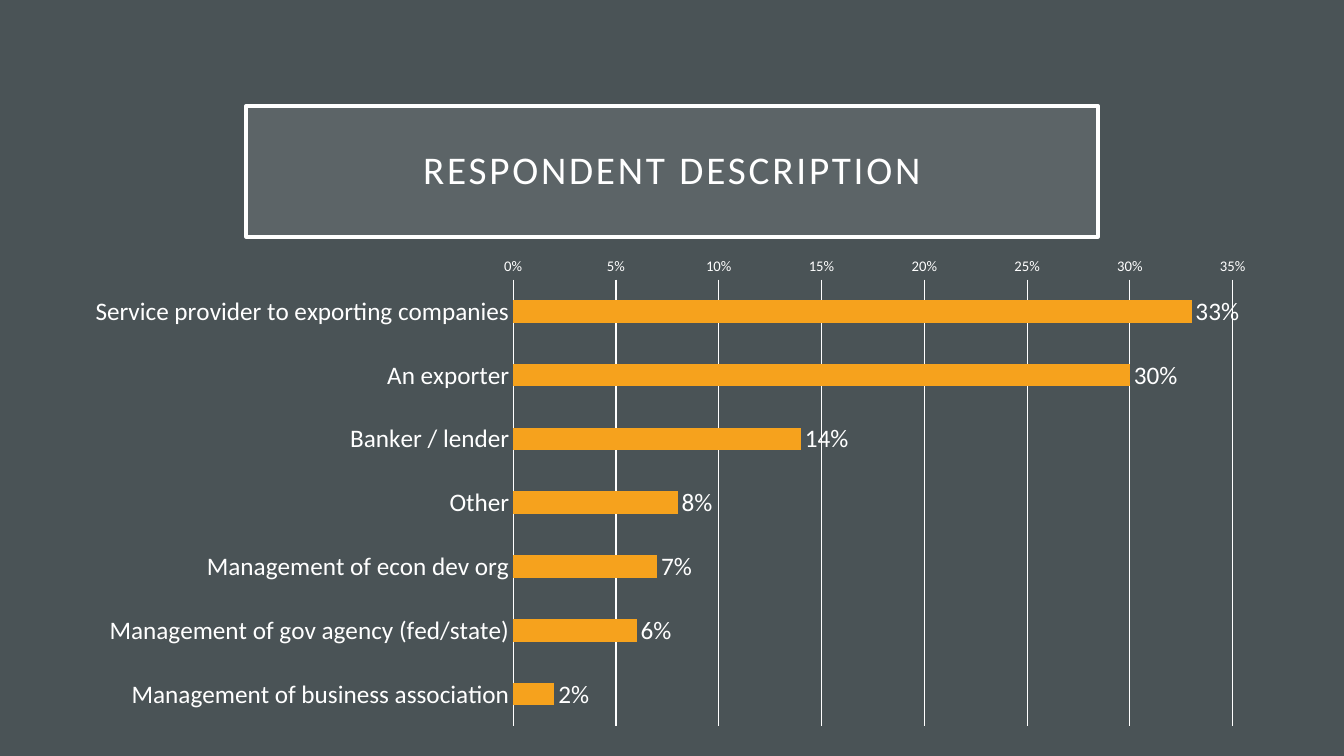
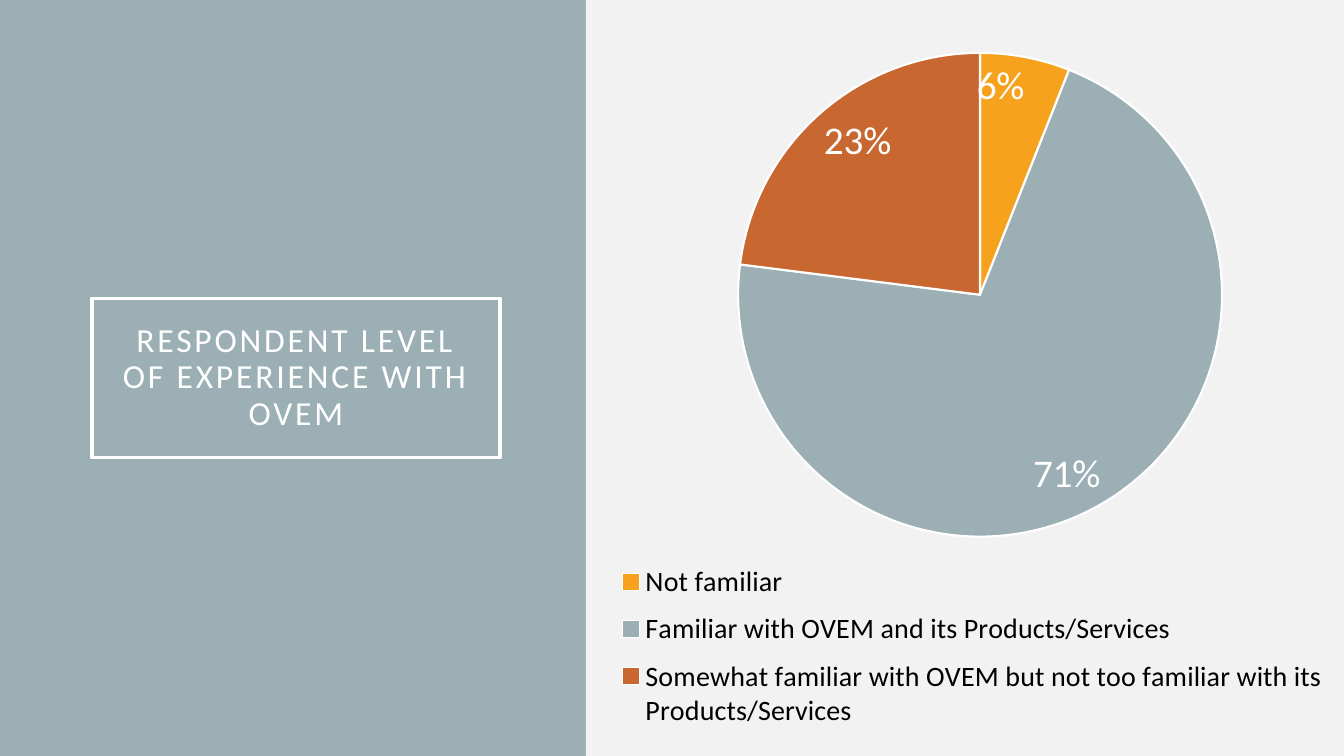
import lxml.etree
import pptx
import pptx.chart.data
import pptx.dml.color
import pptx.enum.chart
import pptx.enum.shapes
import pptx.enum.text
import pptx.oxml.ns
import pptx.util

# Shared look
RGB = pptx.dml.color.RGBColor
WHITE = RGB(0xFF, 0xFF, 0xFF)
BLACK = RGB(0x00, 0x00, 0x00)
SLATE = RGB(0x4A, 0x53, 0x56)
MIST = RGB(0x9B, 0xAF, 0xB5)
PALE = RGB(0xF2, 0xF2, 0xF2)
AMBER = RGB(0xF6, 0xA2, 0x1D)
RUST = RGB(0xC9, 0x67, 0x31)
FONT = "Calibri"
WIDTH = pptx.util.Inches(13.33)
HEIGHT = pptx.util.Inches(7.5)

# Areas: left, top, width, height in percent of the slide
WIDE_TITLE = (18.31, 14, 63.39, 17.33)
BAR_AREA = (5.33, 32.8, 89.12, 64.53)
SIDE_TITLE = (6.83, 39.47, 30.38, 21.07)
PANEL = (43.59, 0, 56.41, 100)

RESPONDENTS = {
    "Service provider to exporting companies": 0.33,
    "An exporter": 0.30,
    "Banker / lender": 0.14,
    "Other": 0.08,
    "Management of econ dev org": 0.07,
    "Management of gov agency (fed/state)": 0.06,
    "Management of business association": 0.02,
}
EXPERIENCE = {
    "Not familiar": 0.06,
    "Familiar with OVEM and its Products/Services": 0.71,
    "Somewhat familiar with OVEM but not too familiar with its Products/Services": 0.23,
}


def place(area):
    left, top, width, height = area
    return [round(share * side / 100) for share, side in
            ((left, WIDTH), (top, HEIGHT), (width, WIDTH), (height, HEIGHT))]


def style_font(font, size, color=WHITE):
    font.name = FONT
    font.size = pptx.util.Pt(size)
    font.color.rgb = color


def style_line(line, points):
    line.color.rgb = WHITE
    line.width = pptx.util.Pt(points)


def chart_tag(name):
    return pptx.oxml.ns.qn("c:" + name)


def add_page(deck, color):
    page = deck.slides.add_slide(deck.slide_layouts[6])
    page.background.fill.solid()
    page.background.fill.fore_color.rgb = color
    return page


def add_rectangle(page, area, color=None):
    box = page.shapes.add_shape(pptx.enum.shapes.MSO_SHAPE.RECTANGLE, *place(area))
    box.shadow.inherit = False
    box.line.fill.background()
    if color is None:
        box.fill.background()
    else:
        box.fill.solid()
        box.fill.fore_color.rgb = color
    return box


def add_title(page, area, text, size, opacity=None):
    box = add_rectangle(page, area, None if opacity is None else WHITE)
    if opacity is not None:
        color = next(box.fill._xPr.iter(pptx.oxml.ns.qn("a:srgbClr")))
        alpha = lxml.etree.SubElement(color, pptx.oxml.ns.qn("a:alpha"))
        alpha.set("val", str(opacity * 1000))
    style_line(box.line, 2.5)
    frame = box.text_frame
    frame.word_wrap = True
    frame.vertical_anchor = pptx.enum.text.MSO_ANCHOR.MIDDLE
    frame.margin_left = frame.margin_right = pptx.util.Inches(0.2)
    frame.margin_top = frame.margin_bottom = pptx.util.Inches(0.2)
    para = frame.paragraphs[0]
    para.alignment = pptx.enum.text.PP_ALIGN.CENTER
    para.line_spacing = 0.9
    span = para.add_run()
    span.text = text
    style_font(span.font, size)
    span.font._element.set("spc", "200")


def add_chart(page, area, kind, values, label_size, label_position):
    data = pptx.chart.data.CategoryChartData(number_format="0%")
    data.categories = list(values)
    data.add_series("Series 1", list(values.values()))
    chart = page.shapes.add_chart(kind, *place(area), data).chart
    chart.has_title = False
    chart.has_legend = False
    style_font(chart.font, 10)
    plot = chart.plots[0]
    plot.has_data_labels = True
    labels = plot.data_labels
    labels.show_value = True
    labels.show_percentage = False
    labels.number_format = "0%"
    labels.number_format_is_linked = False
    labels.position = label_position
    style_font(labels.font, label_size)
    return chart


def make_layout(shares, inner=False):
    layout = lxml.etree.Element(chart_tag("layout"))
    manual = lxml.etree.SubElement(layout, chart_tag("manualLayout"))
    settings = [("layoutTarget", "inner")] if inner else []
    settings += [("xMode", "edge"), ("yMode", "edge")]
    settings += zip("xywh", shares)
    for name, value in settings:
        lxml.etree.SubElement(manual, chart_tag(name)).set("val", str(value))
    return layout


def set_layouts(chart, plot_shares, legend_shares):
    plot_area = next(chart._chartSpace.iter(chart_tag("plotArea")))
    legend = next(chart._chartSpace.iter(chart_tag("legend")))
    for parent in (plot_area, legend):
        for old in parent.findall(chart_tag("layout")):
            parent.remove(old)
    plot_area.insert(0, make_layout(plot_shares, inner=True))
    legend.find(chart_tag("legendPos")).addnext(make_layout(legend_shares))


def add_bar_chart(page, area, values):
    chart = add_chart(page, area, pptx.enum.chart.XL_CHART_TYPE.BAR_CLUSTERED, values,
                      18, pptx.enum.chart.XL_LABEL_POSITION.OUTSIDE_END)
    plot = chart.plots[0]
    plot.gap_width = 182
    plot.vary_by_categories = False
    bars = plot.series[0]
    bars.format.fill.solid()
    bars.format.fill.fore_color.rgb = AMBER

    # Axes
    names, scale = chart.category_axis, chart.value_axis
    for axis, size in ((names, 18), (scale, 10.5)):
        axis.major_tick_mark = pptx.enum.chart.XL_TICK_MARK.NONE
        axis.minor_tick_mark = pptx.enum.chart.XL_TICK_MARK.NONE
        style_font(axis.tick_labels.font, size)
    names.reverse_order = True
    names.has_major_gridlines = False
    style_line(names.format.line, 0.75)
    scale.minimum_scale, scale.maximum_scale, scale.major_unit = 0, 0.35, 0.05
    scale.tick_labels.number_format = "0%"
    scale.tick_labels.number_format_is_linked = False
    scale.format.line.fill.background()
    scale.has_major_gridlines = True
    style_line(scale.major_gridlines.format.line, 0.75)


def add_pie_chart(page, area, values, colors):
    chart = add_chart(page, area, pptx.enum.chart.XL_CHART_TYPE.PIE, values,
                      28, pptx.enum.chart.XL_LABEL_POSITION.INSIDE_END)
    plot = chart.plots[0]
    plot.vary_by_categories = True
    for index, color in enumerate(colors):
        piece = plot.series[0].points[index].format
        piece.fill.solid()
        piece.fill.fore_color.rgb = color
        style_line(piece.line, 1.5)

    # Legend below the pie
    chart.has_legend = True
    chart.legend.position = pptx.enum.chart.XL_LEGEND_POSITION.BOTTOM
    chart.legend.include_in_layout = False
    style_font(chart.legend.font, 20, BLACK)
    set_layouts(chart, (0.2, 0.07, 0.64, 0.64), (0.04, 0.73, 0.94, 0.25))


def main():
    deck = pptx.Presentation()
    deck.slide_width, deck.slide_height = WIDTH, HEIGHT

    # Who answered
    page = add_page(deck, SLATE)
    add_title(page, WIDE_TITLE, "RESPONDENT DESCRIPTION", 28, opacity=10)
    add_bar_chart(page, BAR_AREA, RESPONDENTS)

    # How familiar they are
    page = add_page(deck, MIST)
    add_title(page, SIDE_TITLE, "RESPONDENT LEVEL OF EXPERIENCE WITH OVEM", 24)
    add_rectangle(page, PANEL, PALE)
    add_pie_chart(page, PANEL, EXPERIENCE, (AMBER, MIST, RUST))

    deck.save("out.pptx")


if __name__ == "__main__":
    main()
